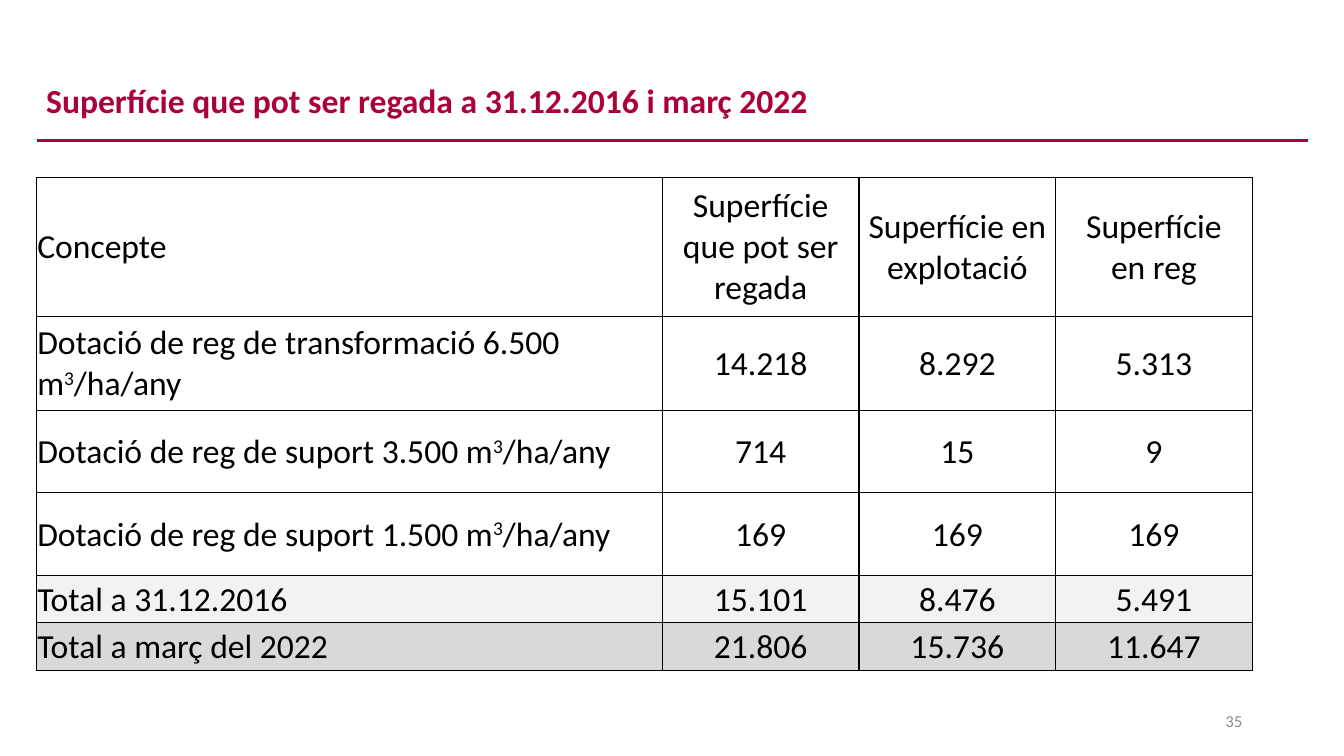
from lxml.etree import SubElement
from pptx import Presentation
from pptx.dml.color import RGBColor
from pptx.enum.shapes import MSO_CONNECTOR
from pptx.enum.text import MSO_ANCHOR, PP_ALIGN
from pptx.oxml import parse_xml
from pptx.oxml.ns import nsdecls, qn
from pptx.util import Inches, Pt

CRIMSON = RGBColor(0xAB, 0x00, 0x3E)
GREY = RGBColor(0x8C, 0x8C, 0x8C)
BLACK = RGBColor(0x00, 0x00, 0x00)
WHITE = RGBColor(0xFF, 0xFF, 0xFF)
LIGHT_GREY = RGBColor(0xF2, 0xF2, 0xF2)
MID_GREY = RGBColor(0xD9, 0xD9, 0xD9)

LEFT = 0.36
COLUMN_WIDTHS = [6.21, 1.95, 1.95, 1.95]
# Each row: height, fill, cell texts; a bar sets off a superscript.
ROWS = [
    (1.38, WHITE, ["Concepte", "Superfície que pot ser regada",
                   "Superfície en explotació", "Superfície\nen reg"]),
    (0.93, WHITE, ["Dotació de reg de transformació 6.500 m|3|/ha/any",
                   "14.218", "8.292", "5.313"]),
    (0.82, WHITE, ["Dotació de reg de suport 3.500 m|3|/ha/any", "714", "15", "9"]),
    (0.82, WHITE, ["Dotació de reg de suport 1.500 m|3|/ha/any", "169", "169", "169"]),
    (0.47, LIGHT_GREY, ["Total a 31.12.2016", "15.101", "8.476", "5.491"]),
    (0.47, MID_GREY, ["Total a març del 2022", "21.806", "15.736", "11.647"]),
]


def style_font(font, size, color, bold=False):
    font.name = "Calibri"
    font.size = Pt(size)
    font.bold = bold
    font.color.rgb = color


def add_label(text, left, top, width, height, size, color, bold=False):
    """Add a one-line text box, centred vertically, and return its paragraph."""
    box = slide.shapes.add_textbox(Inches(left), Inches(top), Inches(width), Inches(height))
    text_frame = box.text_frame
    text_frame.word_wrap = True
    text_frame.vertical_anchor = MSO_ANCHOR.MIDDLE
    text_frame.text = text
    paragraph = text_frame.paragraphs[0]
    style_font(paragraph.runs[0].font, size, color, bold)
    return paragraph


presentation = Presentation()
presentation.slide_width = Inches(13.33)
presentation.slide_height = Inches(7.5)
slide = presentation.slides.add_slide(presentation.slide_layouts[6])

# Title, rule and page number
rule = slide.shapes.add_connector(
    MSO_CONNECTOR.STRAIGHT, Inches(0.37), Inches(1.39), Inches(12.97), Inches(1.39))
rule.line.color.rgb = CRIMSON
rule.line.width = Pt(2.25)
SubElement(rule._element.spPr, qn("a:effectLst"))

page_number = add_label("35", 9.42, 6.95, 3, 0.4, 12, GREY)
page_number.alignment = PP_ALIGN.RIGHT
title = add_label("Superfície que pot ser regada a 31.12.2016 i març 2022",
                  LEFT, 0.7, 12.6, 0.64, 24, CRIMSON, bold=True)
title.line_spacing = 0.9

# Table
table = slide.shapes.add_table(
    len(ROWS), len(COLUMN_WIDTHS), Inches(LEFT), Inches(1.76),
    Inches(sum(COLUMN_WIDTHS)), Inches(sum(height for height, _, _ in ROWS))).table
table.first_row = False
table.horz_banding = False
for column, width in zip(table.columns, COLUMN_WIDTHS):
    column.width = Inches(width)

for row_index, (height, fill_color, texts) in enumerate(ROWS):
    table.rows[row_index].height = Inches(height)
    for column_index, text in enumerate(texts):
        cell = table.cell(row_index, column_index)
        cell.vertical_anchor = MSO_ANCHOR.MIDDLE
        cell.margin_left = cell.margin_right = cell.margin_top = Inches(0.01)
        cell.margin_bottom = 0
        cell.text = text.replace("|", "")
        for paragraph, line in zip(cell.text_frame.paragraphs, text.split("\n")):
            paragraph.alignment = PP_ALIGN.CENTER if column_index else PP_ALIGN.LEFT
            paragraph.clear()
            for part_index, part in enumerate(line.split("|")):
                run = paragraph.add_run()
                run.text = part
                style_font(run.font, 24, BLACK)
                if part_index == 1:
                    run._r.get_or_add_rPr().set("baseline", "30000")
        for side in ("lnL", "lnR", "lnT", "lnB"):
            cell._tc.get_or_add_tcPr().append(parse_xml(
                f'<a:{side} {nsdecls("a")} w="{Pt(1)}"><a:solidFill>'
                f'<a:srgbClr val="{BLACK}"/></a:solidFill></a:{side}>'))
        cell.fill.solid()
        cell.fill.fore_color.rgb = fill_color
table.cell(0, 0).text_frame.paragraphs[0].alignment = PP_ALIGN.JUSTIFY

presentation.save("out.pptx")
